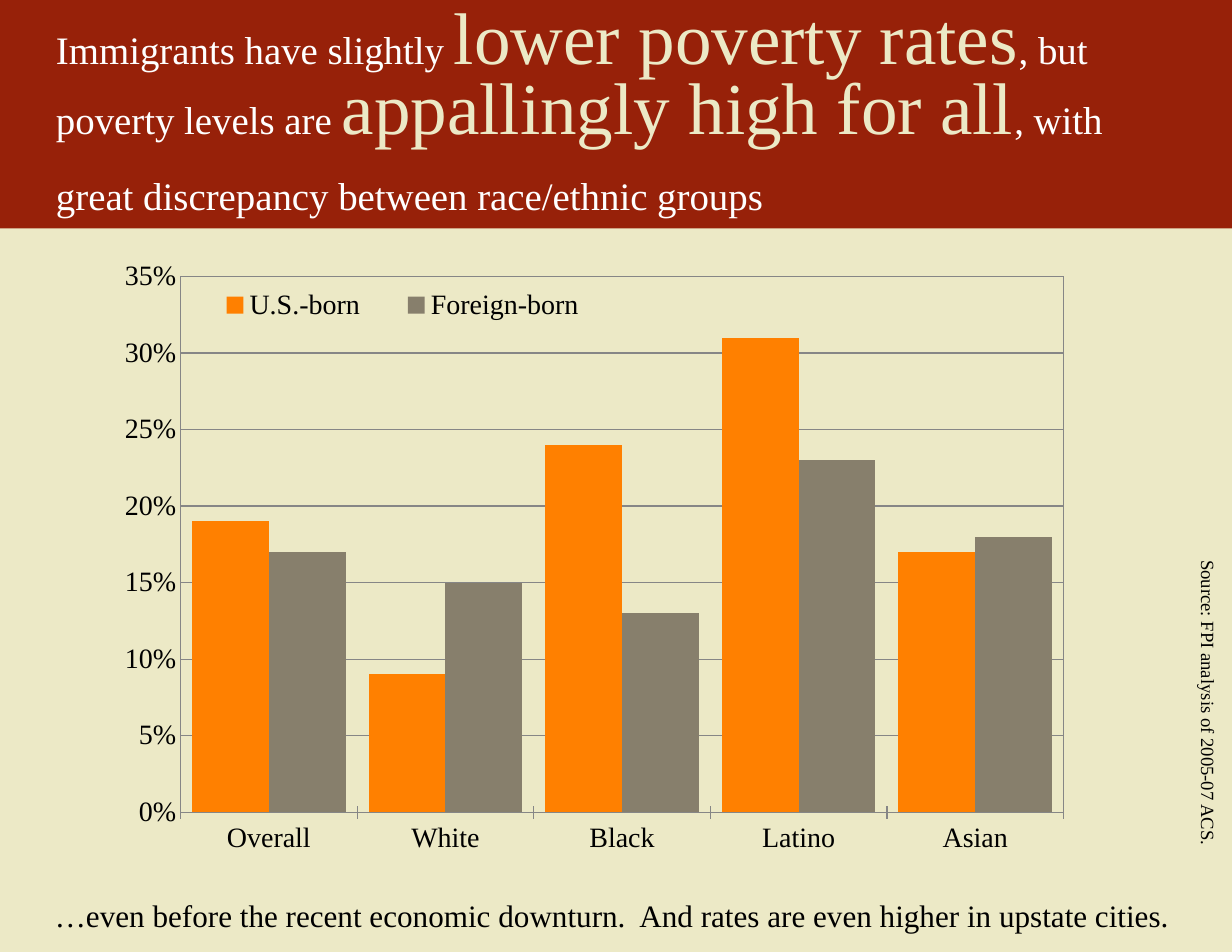
from lxml import etree
from pptx import Presentation
from pptx import util as u
from pptx.chart.data import CategoryChartData
from pptx.dml.color import RGBColor
from pptx.enum import chart as ch, text
from pptx.oxml import parse_xml
from pptx.oxml.ns import nsdecls, qn

THEME = {
    "font": "Times New Roman",
    "cream": RGBColor.from_string("ECE9C6"),
    "red": RGBColor.from_string("972109"),
    "white": RGBColor.from_string("FFFFFF"),
    "black": RGBColor.from_string("000000"),
    "grey": RGBColor.from_string("868686"),
    "us_born": RGBColor.from_string("FF8000"),
    "foreign_born": RGBColor.from_string("877F6C"),
    "lead": 47, "headline": 25, "closing": 20, "chart": 18, "source": 12,
}
WIDTH, HEIGHT = u.Inches(11), u.Inches(8.5)


def style(font, size, color):
    font.name = THEME["font"]
    font.size = u.Pt(THEME[size])
    font.color.rgb = THEME[color]


def place(parent, x, y, w, h):
    """Give a chart part a manual layout in shares of the chart."""
    for old in parent.findall(qn("c:layout")):
        parent.remove(old)
    layout = etree.Element(qn("c:layout"))
    manual = etree.SubElement(layout, qn("c:manualLayout"))
    values = {"xMode": "edge", "yMode": "edge", "x": x, "y": y, "w": w, "h": h}
    if parent.tag == qn("c:plotArea"):
        values = {"layoutTarget": "inner", **values}
    for tag, value in values.items():
        etree.SubElement(manual, qn(f"c:{tag}")).set("val", str(value))
    parent.insert(1 if parent.tag == qn("c:legend") else 0, layout)


deck = Presentation()
deck.slide_width, deck.slide_height = WIDTH, HEIGHT
slide = deck.slides.add_slide(deck.slide_layouts[6])
slide.background.fill.solid()
slide.background.fill.fore_color.rgb = THEME["cream"]

# Poverty rates by race/ethnic group
rates = CategoryChartData(number_format="0%")
rates.categories = ["Overall", "White", "Black", "Latino", "Asian"]
rates.add_series("U.S.-born", [0.19, 0.09, 0.24, 0.31, 0.17])
rates.add_series("Foreign-born", [0.17, 0.15, 0.13, 0.23, 0.18])
chart = slide.shapes.add_chart(
    ch.XL_CHART_TYPE.COLUMN_CLUSTERED, u.Inches(0.53), u.Inches(2.29),
    u.Inches(9.58), u.Inches(5.79), rates).chart
style(chart.font, "chart", "black")
chart.has_title = False
bars = chart.plots[0]
for name, value in {"gap_width": 30, "overlap": 0, "vary_by_categories": False}.items():
    setattr(bars, name, value)
for series, color in zip(bars.series, ("us_born", "foreign_born")):
    series.format.fill.solid()
    series.format.fill.fore_color.rgb = THEME[color]

# Axes, grid and frame
groups, percent = chart.category_axis, chart.value_axis
axis_formats = {
    groups: {"major_tick_mark": ch.XL_TICK_MARK.CROSS},
    percent: {"major_tick_mark": ch.XL_TICK_MARK.NONE, "minimum_scale": 0,
              "maximum_scale": 0.35, "major_unit": 0.05,
              "has_major_gridlines": True},
}
for axis, formats in axis_formats.items():
    for name, value in formats.items():
        setattr(axis, name, value)
percent.tick_labels.number_format = "0%"
percent.tick_labels.number_format_is_linked = False
for line in (groups.format.line, percent.format.line, percent.major_gridlines.format.line):
    line.color.rgb = THEME["grey"]
    line.width = u.Pt(0.75)
plot_area = chart.plots[0]._element.getparent()
place(plot_area, 0.113, 0.031, 0.823, 0.826)
plot_area.append(parse_xml(
    f'<c:spPr {nsdecls("c", "a")}><a:noFill/><a:ln w="3175"><a:solidFill>'
    f'<a:srgbClr val="{THEME["grey"]}"/></a:solidFill></a:ln></c:spPr>'))

# Legend inside the plot, at its upper left
chart.has_legend = True
chart.legend.position = ch.XL_LEGEND_POSITION.RIGHT
chart.legend.include_in_layout = False
style(chart.legend.font, "chart", "black")
place(chart.legend._element, 0.12, 0.04, 0.4, 0.07)

# Headline band
band = slide.shapes.add_shape(1, u.Inches(-0.06), 0, WIDTH + u.Inches(0.06), int(HEIGHT * 0.24))
band.shadow.inherit = False
band.fill.solid()
band.fill.fore_color.rgb = THEME["red"]
band.line.fill.background()
frame_format = {
    "word_wrap": True, "vertical_anchor": text.MSO_ANCHOR.MIDDLE,
    "margin_left": u.Inches(0.56), "margin_right": u.Inches(0.56),
    "margin_top": 0, "margin_bottom": 0,
}
for name, value in frame_format.items():
    setattr(band.text_frame, name, value)
headline = band.text_frame.paragraphs[0]
headline.alignment = text.PP_ALIGN.LEFT
headline.line_spacing = u.Pt(44.6)
for words, size, color in (
    ("Immigrants have slightly ", "headline", "white"),
    ("lower poverty rates", "lead", "cream"),
    (", but poverty levels are ", "headline", "white"),
    ("appallingly high for all", "lead", "cream"),
    (", with great discrepancy between race/ethnic groups", "headline", "white"),
):
    run = headline.add_run()
    run.text = words
    style(run.font, size, color)

# Source (turned on its side) and closing remark
for words, box, size, direction in (
    ("Source: FPI analysis of 2005-07 ACS.", (10.57, 4.94, 0.43, 2.68), "source", "eaVert"),
    ("…even before the recent economic downturn.  And rates are even higher in upstate cities.",
     (0.38, 7.94, 10.19, 0.45), "closing", "horz"),
):
    note = slide.shapes.add_textbox(*map(u.Inches, box)).text_frame
    note_format = {
        "word_wrap": direction == "horz",
        "auto_size": text.MSO_AUTO_SIZE.SHAPE_TO_FIT_TEXT,
        "margin_left": u.Inches(0.11), "margin_right": u.Inches(0.11),
        "margin_top": u.Inches(0.06), "margin_bottom": u.Inches(0.06),
    }
    for name, value in note_format.items():
        setattr(note, name, value)
    note._txBody.bodyPr.set("vert", direction)
    run = note.paragraphs[0].add_run()
    run.text = words
    style(run.font, size, "black")

deck.save("out.pptx")
